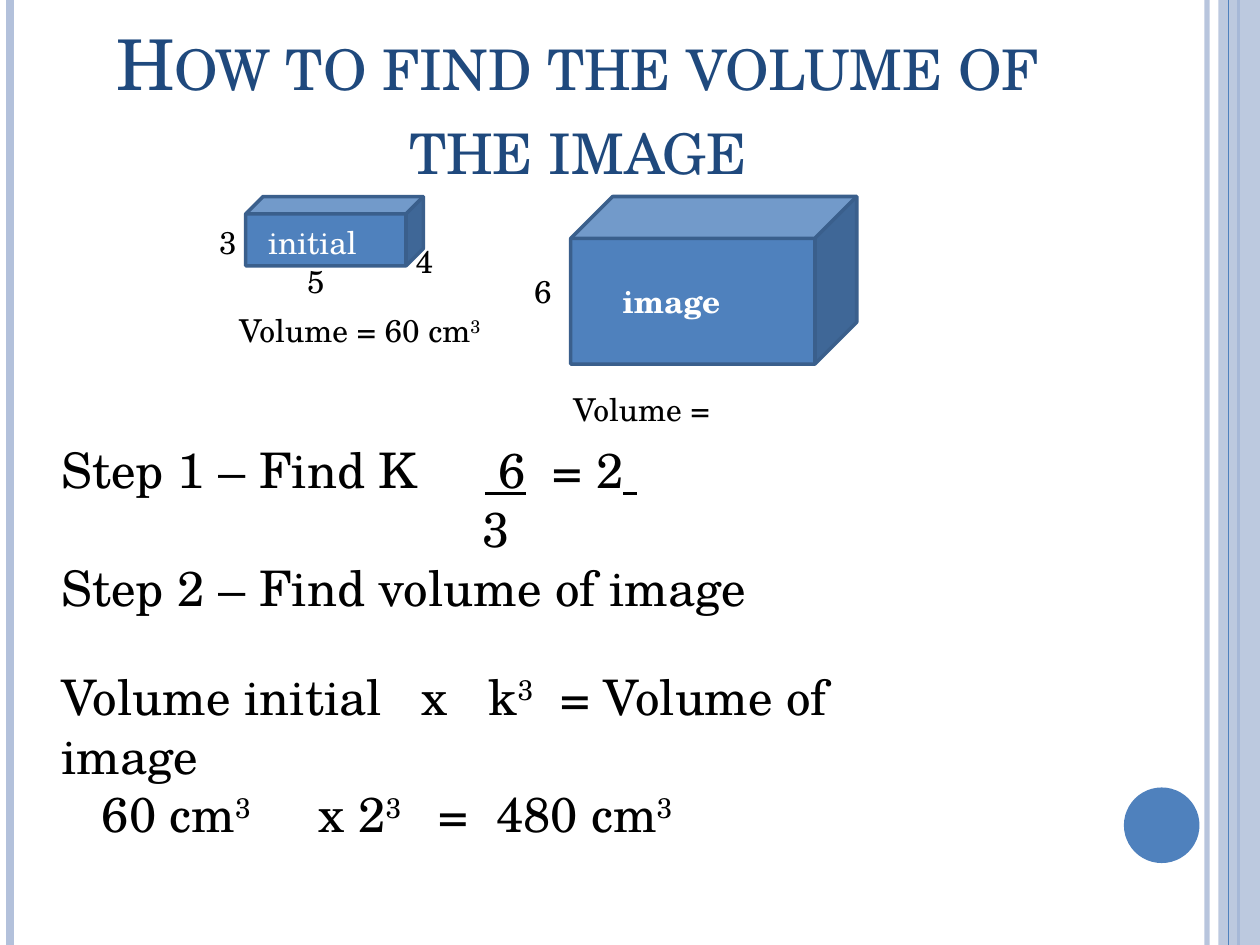
from dataclasses import dataclass

from lxml import etree
from pptx import Presentation
from pptx.dml.color import RGBColor
from pptx.enum import shapes, text
from pptx.oxml import ns
from pptx.util import Inches, Pt

FONT = "TeX Gyre Schola"
BLUE = RGBColor(0x4F, 0x81, 0xBD)
PALE_BLUE = RGBColor(0xB3, 0xC1, 0xDB)
EDGE_BLUE = RGBColor(0x3A, 0x5F, 0x8C)
NAVY = RGBColor(0x1F, 0x49, 0x7D)
BLACK = RGBColor(0, 0, 0)
WHITE = RGBColor(0xFF, 0xFF, 0xFF)


@dataclass
class Span:
    text: str
    raised: bool = False
    underlined: bool = False


@dataclass
class Line:
    spans: list[Span]
    tabs: tuple[float, ...] = ()
    space_before: float = 0


@dataclass
class Rule:
    x: float
    width: float
    color: RGBColor
    opacity: int = 100


@dataclass
class Label:
    left: float
    top: float
    width: float
    spans: list[Span]
    color: RGBColor = BLACK
    bold: bool = False


CUBED = Span("3", raised=True)

LEFT_RULES = [Rule(9.58, 3, PALE_BLUE, 93), Rule(0.08, 4.5, PALE_BLUE),
              Rule(9.83, 1.5, BLUE)]
TOP_RULE = Rule(9.75, 0.75, BLUE)

CUBES = [(1.95, 1.56, 1.41, 0.55), (4.53, 1.56, 2.27, 1.33)]

LABELS = [
    Label(1.8, 2.42, 2.19, [Span("Volume = 60 cm"), CUBED]),
    Label(2.34, 2.03, 0.47, [Span("5")]),
    Label(3.2, 1.87, 0.47, [Span("4")]),
    Label(1.64, 1.72, 0.47, [Span("3")]),
    Label(4.14, 2.11, 0.47, [Span("6")]),
    Label(2.03, 1.72, 1.17, [Span("initial")], WHITE),
    Label(4.84, 2.19, 1.41, [Span("image")], WHITE, True),
    Label(4.45, 3.05, 2.19, [Span("Volume =")]),
]

STEPS = [
    Line([Span("Step 1 – Find K\t"), Span(" 6\t", underlined=True),
          Span("= 2"), Span(" ", underlined=True)], (3.36, 3.9)),
    Line([Span("\t3")], (3.34,)),
    Line([Span("Step 2 – Find volume of image")]),
    Line([Span("Volume initial\tx\tk"), CUBED, Span("\t= Volume of image")],
         (2.86, 3.39, 3.96), 28.7),
    Line([Span("\t60 cm"), CUBED, Span("\tx 2"), CUBED,
          Span("\t=\t480 cm"), CUBED], (0.32, 2.04, 2.99, 3.45)),
]


def set_opacity(properties, percent: int) -> None:
    color = properties.find(".//" + ns.qn("a:srgbClr"))
    etree.SubElement(color, ns.qn("a:alpha"), val=str(percent * 1000))


def draw_rule(page, rule: Rule) -> None:
    line = page.shapes.add_connector(
        shapes.MSO_CONNECTOR.STRAIGHT,
        Inches(rule.x), Inches(0), Inches(rule.x), Inches(7.5))
    line.line.color.rgb = rule.color
    line.line.width = Pt(rule.width)
    properties = line._element.spPr
    if rule.opacity < 100:
        set_opacity(properties, rule.opacity)
    etree.SubElement(properties, ns.qn("a:effectLst"))


def draw_shape(page, kind, place: tuple[float, ...], fill: RGBColor):
    shape = page.shapes.add_shape(kind, *map(Inches, place))
    shape.shadow.inherit = False
    shape.fill.solid()
    shape.fill.fore_color.rgb = fill
    shape.line.fill.background()
    return shape


def add_run(para, span: Span, size: float, color: RGBColor, bold: bool = False):
    run = para.add_run()
    run.text = span.text
    run.font.name = FONT
    run.font.size = Pt(size)
    run.font.color.rgb = color
    run.font.bold = bold
    if span.underlined:
        run.font.underline = True
    if span.raised:
        run.font._element.set("baseline", "30000")
    return run


def set_tabs(para, stops: tuple[float, ...]) -> None:
    tab_list = etree.SubElement(para._p.get_or_add_pPr(), ns.qn("a:tabLst"))
    for stop in stops:
        etree.SubElement(tab_list, ns.qn("a:tab"),
                         pos=str(Inches(stop)), algn="l")


def draw_text(page, place: tuple[float, ...], lines: list[Line], size: float,
              color: RGBColor = BLACK, bold: bool = False) -> None:
    frame = page.shapes.add_textbox(*map(Inches, place)).text_frame
    frame.word_wrap = True
    for index, line in enumerate(lines):
        para = frame.add_paragraph() if index else frame.paragraphs[0]
        if line.space_before:
            para.space_before = Pt(line.space_before)
        if line.tabs:
            set_tabs(para, line.tabs)
        for span in line.spans:
            add_run(para, span, size, color, bold)


def draw_title(page) -> None:
    title = page.shapes.title
    title.left, title.top = Inches(0.5), Inches(0.3)
    title.width, title.height = Inches(8.17), Inches(1.25)
    frame = title.text_frame
    frame.word_wrap = True
    frame.auto_size = text.MSO_AUTO_SIZE.NONE
    frame.vertical_anchor = text.MSO_ANCHOR.BOTTOM
    para = frame.paragraphs[0]
    para.alignment = text.PP_ALIGN.CENTER
    run = add_run(para, Span("How to find the volume of the image"), 40, NAVY)
    run.font._element.set("cap", "small")


def main() -> None:
    deck = Presentation()
    deck.slide_width, deck.slide_height = Inches(10), Inches(7.5)
    page = deck.slides.add_slide(deck.slide_layouts.get_by_name("Title Only"))

    # Side decoration
    for rule in LEFT_RULES:
        draw_rule(page, rule)
    band = draw_shape(page, shapes.MSO_SHAPE.RECTANGLE,
                      (9.67, 0, 0.33, 7.5), PALE_BLUE)
    set_opacity(band._element.spPr, 87)
    draw_rule(page, TOP_RULE)
    draw_shape(page, shapes.MSO_SHAPE.OVAL, (8.92, 6.25, 0.6, 0.6), BLUE)

    # Title and worked steps
    draw_title(page)
    draw_text(page, (0.39, 3.44, 7.19, 2.86), STEPS, 28)

    # Solids and their labels
    for place in CUBES:
        cube = draw_shape(page, shapes.MSO_SHAPE.CUBE, place, BLUE)
        cube.line.color.rgb = EDGE_BLUE
        cube.line.width = Pt(2)
    for label in LABELS:
        draw_text(page, (label.left, label.top, label.width, 0.4),
                  [Line(label.spans)], 18, label.color, label.bold)

    deck.save("out.pptx")


if __name__ == "__main__":
    main()
